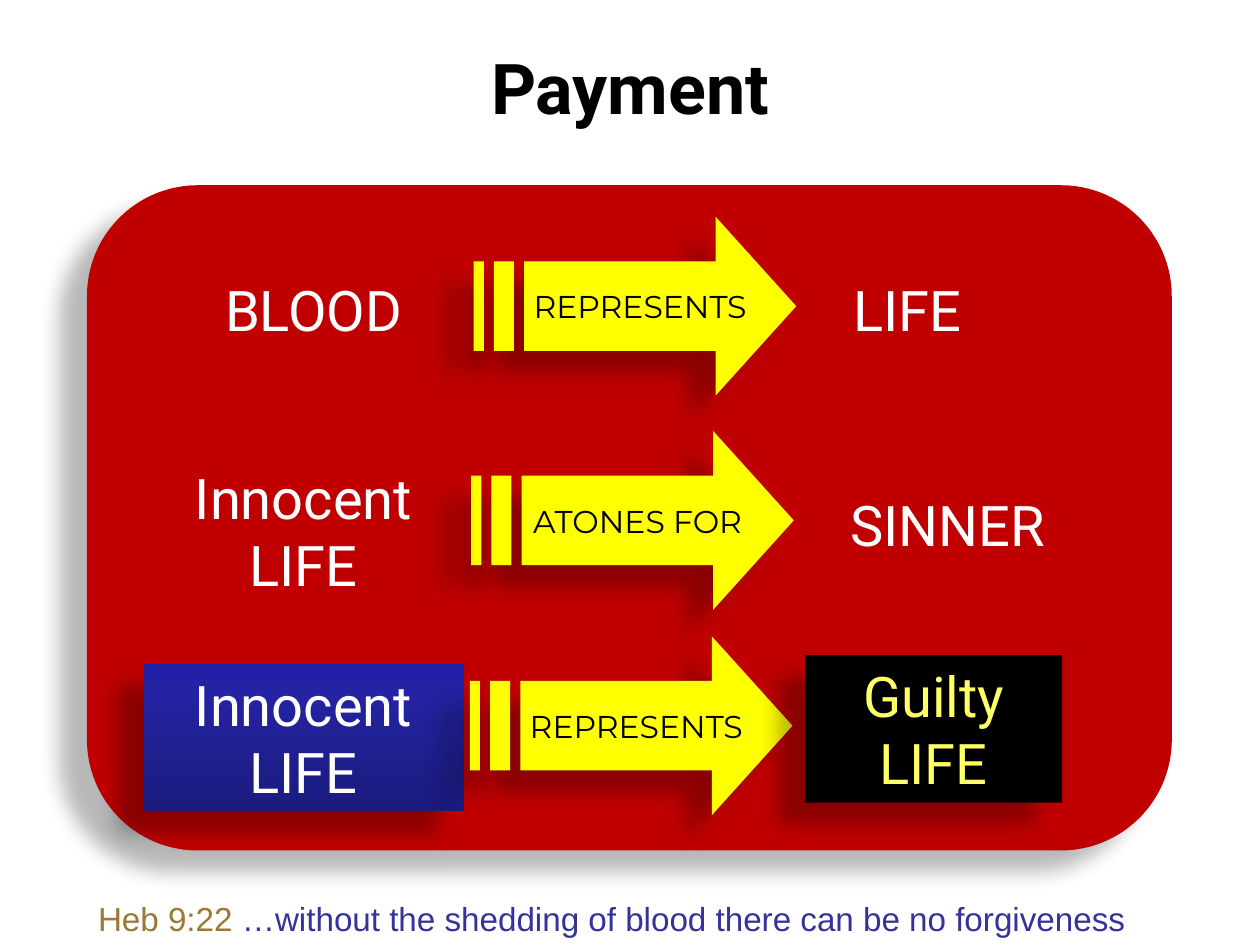
from copy import deepcopy

from lxml.etree import SubElement
from pptx import Presentation
from pptx.dml.color import RGBColor
from pptx.enum.shapes import MSO_SHAPE
from pptx.enum.text import MSO_ANCHOR, MSO_AUTO_SIZE, PP_ALIGN
from pptx.oxml.ns import qn
from pptx.util import Inches, Pt

COLORS = {
    "panel": "C00000", "arrow": "FFFF00", "black": "000000", "white": "FFFFFF",
    "guilty": "FFFF66", "reference": "997934", "verse": "333399",
}
BLUE_STOPS = [(0, "1B1B7E"), (0.8, "2323A3"), (1, "2020A6")]

# left box, left label, arrow corner, arrow label, right box, right label
ROWS = [
    ((0.96, 2.14, 3.06, 0.63), "BLOOD", (3.76, 1.72), "REPRESENTS",
     (5.67, 2.14, 3.06, 0.63), "LIFE"),
    ((0.88, 3.63, 3.06, 1.17), "Innocent LIFE", (3.74, 3.42), "ATONES FOR",
     (5.99, 3.84, 3.06, 0.63), "SINNER"),
    ((1.14, 5.27, 2.54, 1.17), "Innocent LIFE", (3.73, 5.05), "REPRESENTS",
     (6.39, 5.2, 2.04, 1.17), "Guilty LIFE"),
]


def rgb(name):
    return RGBColor.from_string(COLORS[name])


def add_span(para, text, size, font, color, bold=False):
    span = para.add_run()
    span.text = text
    span.font.size, span.font.name, span.font.bold = Pt(size), font, bold
    span.font.color.rgb = rgb(color)


def add_shadow(shape):
    """Cast a soft shadow to the lower left."""
    shape.shadow.inherit = False
    effects = shape._element.spPr.find(qn("a:effectLst"))
    shadow = SubElement(effects, qn("a:outerShdw"), blurRad=str(Pt(11.8)),
                        dist=str(Pt(19.7)), dir=str(141 * 60000),
                        algn="ctr", rotWithShape="0")
    color = SubElement(shadow, qn("a:srgbClr"), val=COLORS["black"])
    SubElement(color, qn("a:alpha"), val="28000")


def finish(shape, color):
    shape.fill.solid()
    shape.fill.fore_color.rgb = rgb(color)
    shape.line.fill.background()
    add_shadow(shape)


def fill_blue(shape):
    """Shade the shape from dark blue at the bottom to lighter blue."""
    shape.fill.gradient()
    shape.fill.gradient_angle = 90
    stop_list = shape._element.spPr.find(qn("a:gradFill")).find(qn("a:gsLst"))
    stop_list.append(deepcopy(stop_list[0]))
    for stop, (position, color) in zip(shape.fill.gradient_stops, BLUE_STOPS):
        stop.position = position
        stop.color.rgb = RGBColor.from_string(color)


def write_label(shape, text, color="white", inset=0.1):
    frame = shape.text_frame
    frame.word_wrap = True
    frame.auto_size = MSO_AUTO_SIZE.SHAPE_TO_FIT_TEXT
    frame.vertical_anchor = MSO_ANCHOR.TOP
    frame.margin_left = frame.margin_right = Inches(inset)
    para = frame.paragraphs[0]
    para.alignment = PP_ALIGN.CENTER
    add_span(para, text, 32, "Roboto", color)


def add_text(page, box):
    return page.shapes.add_textbox(*map(Inches, box))


def add_block(page, box, color, kind=MSO_SHAPE.RECTANGLE):
    block = page.shapes.add_shape(kind, *map(Inches, box))
    finish(block, color)
    return block


def add_striped_arrow(page, corner, text):
    """Draw an arrow with two stripes behind its shaft."""
    left, top = corner
    shaft_top, shaft_bottom = 0.355, 1.065
    head = [(1.92, 0), (1.92, shaft_top), (0.4, shaft_top), (0.4, shaft_bottom),
            (1.92, shaft_bottom), (1.92, 1.42), (2.56, 0.71)]
    stripes = [[(start, shaft_top), (start, shaft_bottom), (end, shaft_bottom),
                (end, shaft_top)] for start, end in ((0.16, 0.32), (0, 0.08))]
    outlines = [[(Inches(left + x), Inches(top + y)) for x, y in outline]
                for outline in [head, *stripes]]
    builder = page.shapes.build_freeform(*outlines[0][0])
    for outline in outlines:
        builder.move_to(*outline[0])
        builder.add_line_segments(outline[1:], close=True)
    arrow = builder.convert_to_shape()
    finish(arrow, "arrow")
    frame = arrow.text_frame
    frame.word_wrap = False
    frame.vertical_anchor = MSO_ANCHOR.MIDDLE
    frame.margin_left, frame.margin_right = Inches(0.18), Inches(0.1)
    para = frame.paragraphs[0]
    para.alignment = PP_ALIGN.CENTER
    add_span(para, text, 18, "Montserrat", "black")


def add_title(page, box, text):
    title = page.shapes.title
    title.left, title.top, title.width, title.height = map(Inches, box)
    frame = title.text_frame
    frame.margin_left = frame.margin_right = frame.margin_top = frame.margin_bottom = 0
    frame.vertical_anchor = MSO_ANCHOR.MIDDLE
    para = frame.paragraphs[0]
    para.alignment = PP_ALIGN.CENTER
    para.line_spacing = 0.95
    add_span(para, text, 40, "Roboto", "black", bold=True)


def add_rows(page):
    for index, (left_box, left, corner, link, right_box, right) in enumerate(ROWS):
        framed = index == len(ROWS) - 1
        if framed:
            subject = add_block(page, left_box, "panel")
            fill_blue(subject)
        else:
            subject = add_text(page, left_box)
        write_label(subject, left, inset=0.1 if framed else 0.3)
        add_striped_arrow(page, corner, link)
        if framed:
            write_label(add_block(page, right_box, "black"), right, "guilty")
        else:
            write_label(add_text(page, right_box), right)


def add_verse(page, box):
    frame = add_text(page, box).text_frame
    frame.word_wrap = True
    frame.auto_size = MSO_AUTO_SIZE.SHAPE_TO_FIT_TEXT
    para = frame.paragraphs[0]
    para.alignment = PP_ALIGN.CENTER
    add_span(para, "Heb 9:22 ", 19, "Arial", "reference")
    add_span(para, "…without the shedding of blood there can be no forgiveness",
             19, "Arial", "verse")


def main():
    deck = Presentation()
    deck.slide_width, deck.slide_height = Inches(10), Inches(7.5)
    page = deck.slides.add_slide(deck.slide_layouts[5])
    add_title(page, (0, 0.09, 10, 1.25), "Payment")
    add_block(page, (0.69, 1.47, 8.61, 5.28), "panel", MSO_SHAPE.ROUNDED_RECTANGLE)
    add_rows(page)
    add_verse(page, (0, 7.08, 9.71, 0.42))
    deck.save("out.pptx")


if __name__ == "__main__":
    main()
